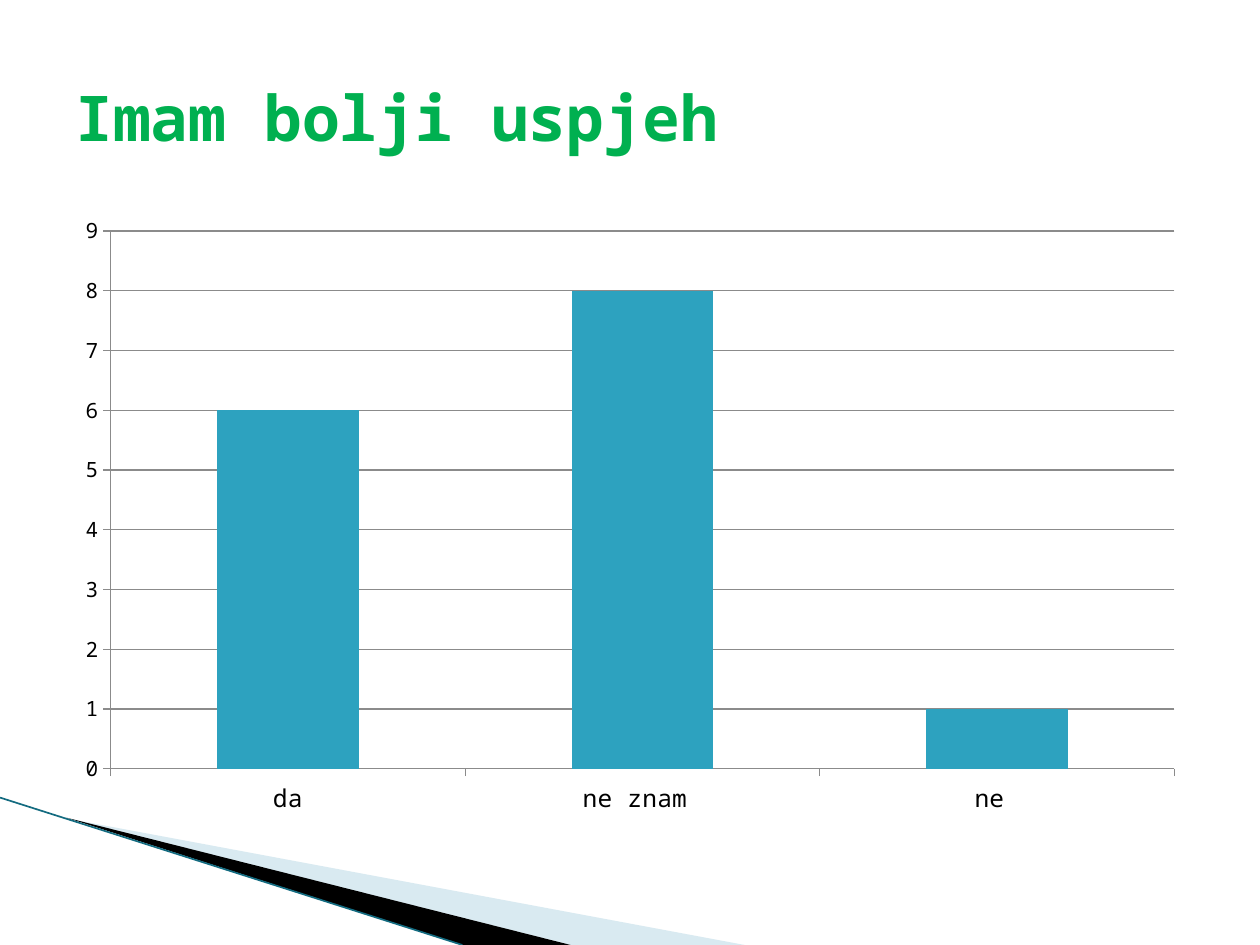
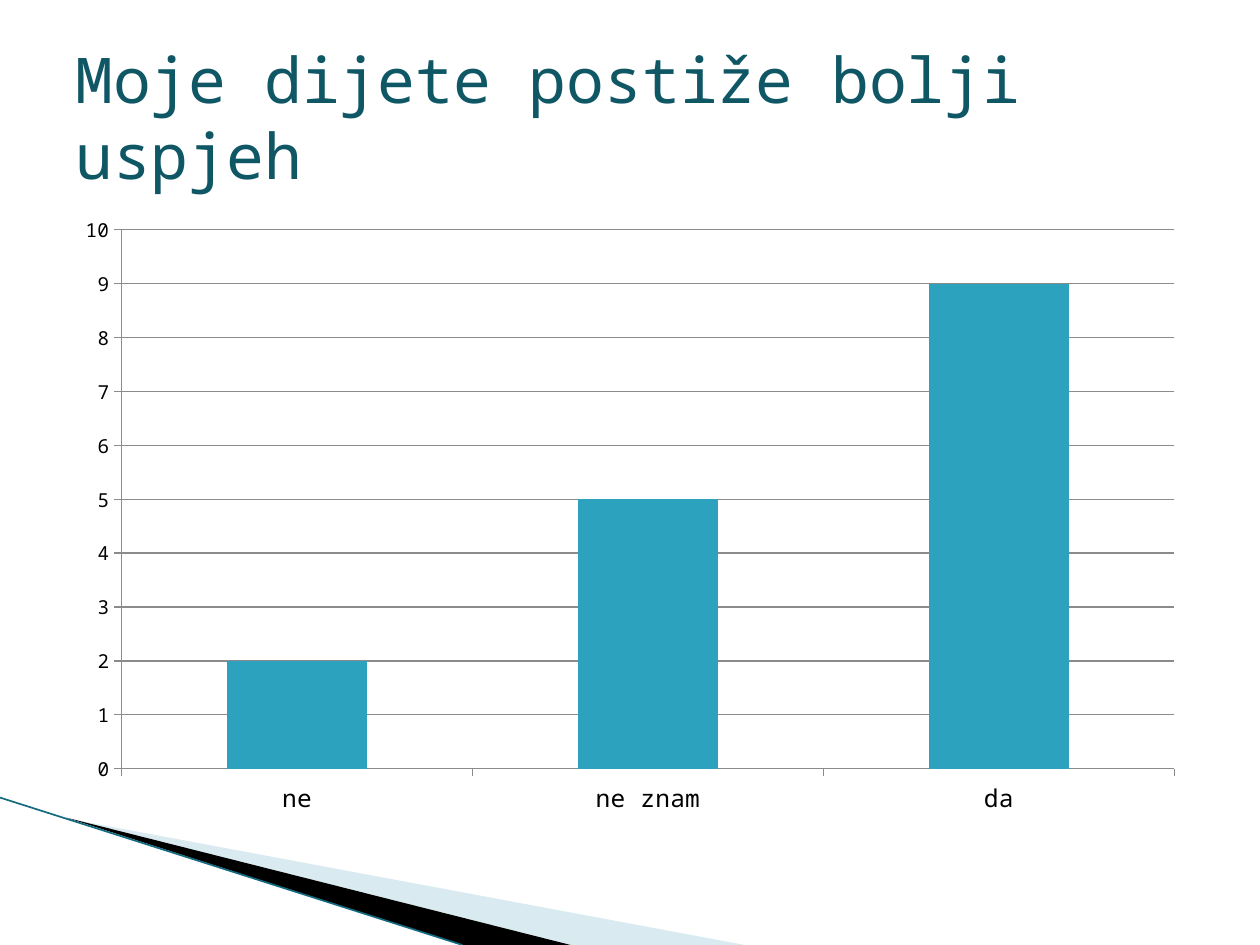
from lxml import etree
from pptx import Presentation
from pptx import util as u
from pptx.chart.data import CategoryChartData
from pptx.dml.color import RGBColor
from pptx.enum import chart as charts, shapes, text
from pptx.oxml.ns import qn

COLUMNS, ROWS = 10, 7.5
CELL = u.Inches(1)
FONT = "Noto Sans Mono"
GREEN, TEAL = "00B050", "105766"
BAR, GRID, BLACK = "2DA2BF", "8B8B8B", "000000"
PALE_BLUE, EDGE = "A0CBDC", "136B80"
TITLE_AREA = (0.5, 0.3, 9, 1.25)
CHART_AREA = (0.5, 1.62, 9, 4.95)
PALE_WEDGE = [(0.55, 6.5), (5.91, ROWS), (4.53, ROWS)]
BLACK_WEDGE = [(0.53, 6.49), (4.53, ROWS), (3.67, ROWS)]
EDGE_ENDS = [(0, 6.33), (3.67, ROWS)]


def cells(*counts):
    return [round(count * CELL) for count in counts]


def color(value):
    return RGBColor.from_string(value)


def paint(fill, value):
    fill.solid()
    fill.fore_color.rgb = color(value)


def style_font(font, size, value, bold=False):
    font.name = FONT
    font.size = u.Pt(size)
    font.bold = bold
    font.color.rgb = color(value)


def add_wedge(slide, points, value, opacity=100):
    start, *rest = [cells(*point) for point in points]
    builder = slide.shapes.build_freeform(*start)
    builder.add_line_segments(rest, close=True)
    shape = builder.convert_to_shape()
    shape.shadow.inherit = False
    paint(shape.fill, value)
    shape.line.fill.background()
    if opacity < 100:
        shade = shape.fill._xPr.find(".//" + qn("a:srgbClr"))
        etree.SubElement(shade, qn("a:alpha"), val=str(opacity * 1000))


def add_edge(slide):
    start, end = EDGE_ENDS
    connector = slide.shapes.add_connector(
        shapes.MSO_CONNECTOR.STRAIGHT, *cells(*start, *end))
    connector.line.width = u.Pt(0.95)
    connector.line.color.rgb = color(EDGE)
    etree.SubElement(connector._element.spPr, qn("a:effectLst"))


def add_corner(slide):
    add_wedge(slide, PALE_WEDGE, PALE_BLUE, opacity=40)
    add_wedge(slide, BLACK_WEDGE, BLACK)
    add_edge(slide)


def add_title(slide, wording, value, bold):
    frame = slide.shapes.add_textbox(*cells(*TITLE_AREA)).text_frame
    frame.word_wrap = True
    frame.vertical_anchor = text.MSO_ANCHOR.MIDDLE
    run = frame.paragraphs[0].add_run()
    run.text = wording
    style_font(run.font, 36, value, bold)


def style_axis(axis, size):
    axis.major_tick_mark = charts.XL_TICK_MARK.OUTSIDE
    axis.minor_tick_mark = charts.XL_TICK_MARK.NONE
    axis.format.line.color.rgb = color(GRID)
    axis.format.line.width = u.Pt(0.75)
    style_font(axis.tick_labels.font, size, BLACK)


def add_column_chart(slide, answers, maximum, value_size):
    data = CategoryChartData()
    data.categories = list(answers)
    data.add_series("Series 1", list(answers.values()))
    chart = slide.shapes.add_chart(
        charts.XL_CHART_TYPE.COLUMN_CLUSTERED, *cells(*CHART_AREA), data).chart
    chart.has_legend = False
    chart.has_title = False
    style_font(chart.font, value_size, BLACK)

    style_axis(chart.category_axis, 14)
    value_axis = chart.value_axis
    style_axis(value_axis, value_size)
    value_axis.minimum_scale = 0
    value_axis.maximum_scale = maximum
    value_axis.major_unit = 1
    value_axis.has_major_gridlines = True
    gridline = value_axis.major_gridlines.format.line
    gridline.color.rgb = color(GRID)
    gridline.width = u.Pt(0.75)

    plot = chart.plots[0]
    plot.gap_width = 150
    plot.vary_by_categories = False
    paint(plot.series[0].format.fill, BAR)


def add_survey_slide(presentation, wording, title_color, bold,
                     answers, maximum, value_size):
    slide = presentation.slides.add_slide(presentation.slide_layouts[6])
    add_corner(slide)
    add_column_chart(slide, answers, maximum, value_size)
    add_title(slide, wording, title_color, bold)


def main():
    presentation = Presentation()
    presentation.slide_width, presentation.slide_height = cells(COLUMNS, ROWS)
    add_survey_slide(presentation, "Imam bolji uspjeh", GREEN, True,
                     {"da": 6, "ne znam ": 8, "ne ": 1}, 9, 12)
    add_survey_slide(presentation, "Moje dijete postiže bolji uspjeh", TEAL, False,
                     {"ne": 2, "ne znam": 5, "da": 9}, 10, 11)
    presentation.save("out.pptx")


if __name__ == "__main__":
    main()
